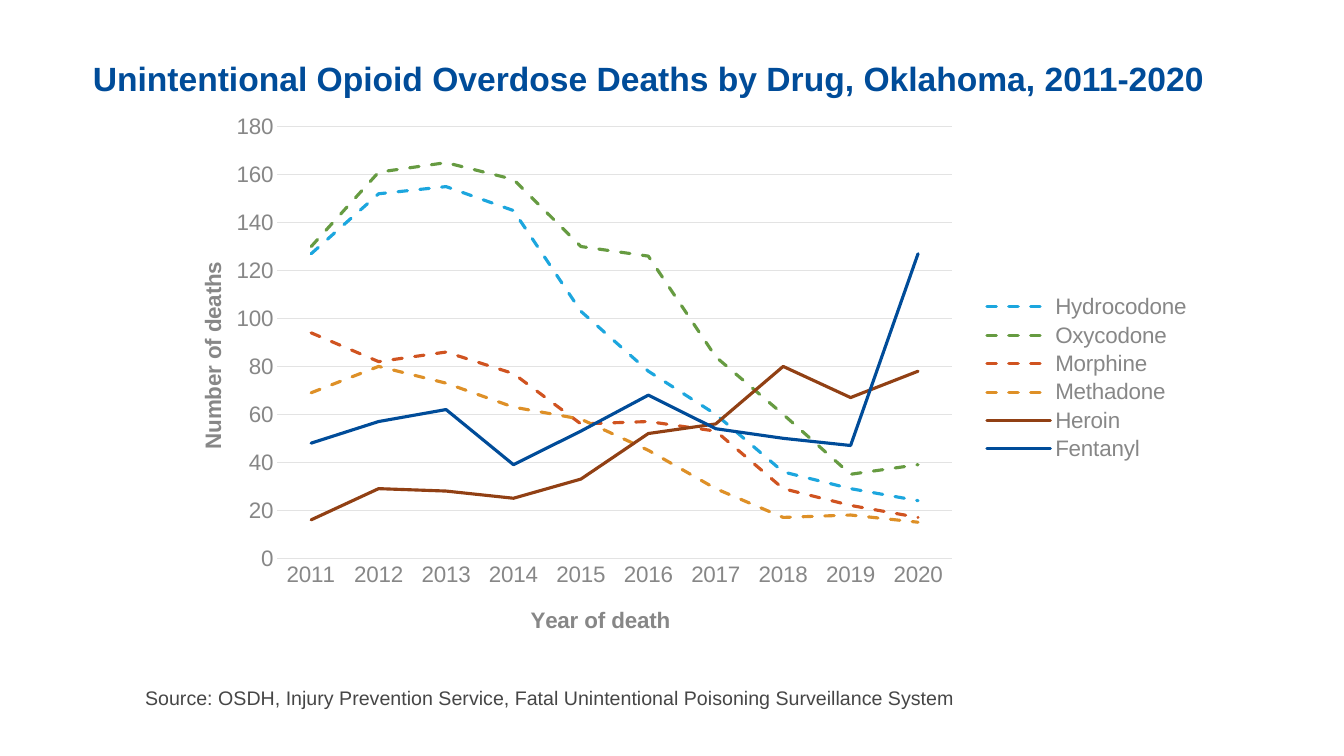
from lxml import etree
from pptx import Presentation
from pptx.chart.data import CategoryChartData
from pptx.dml.color import RGBColor
from pptx.enum.chart import XL_CHART_TYPE, XL_LEGEND_POSITION, XL_TICK_MARK
from pptx.enum.dml import MSO_LINE
from pptx.enum.text import MSO_ANCHOR, MSO_AUTO_SIZE, PP_ALIGN
from pptx.oxml.ns import qn
from pptx.util import Inches, Pt

LINE, RIGHT = XL_CHART_TYPE.LINE, XL_LEGEND_POSITION.RIGHT
NO_TICK, DASH = XL_TICK_MARK.NONE, MSO_LINE.DASH
LEFT, TOP, FIXED = PP_ALIGN.LEFT, MSO_ANCHOR.TOP, MSO_AUTO_SIZE.NONE

THEME = {
    "title": {"name": "Arial", "size": Pt(24), "bold": True, "color": "004C99"},
    "source": {"name": "Arial", "size": Pt(14), "bold": False, "color": "464646"},
    "chart": {"name": "Arial", "size": Pt(16), "bold": False, "color": "878787"},
    "axis_title": {"name": "Arial", "size": Pt(16), "bold": True, "color": "878787"},
    "grid": "E3E3E3",
}

YEARS = [str(year) for year in range(2011, 2021)]
DRUGS = [  # name, colour, dashed, deaths per year
    ("Hydrocodone", "1CA6DE", True, (127, 152, 155, 145, 103, 78, 60, 36, 29, 24)),
    ("Oxycodone", "669B41", True, (130, 161, 165, 158, 130, 126, 84, 60, 35, 39)),
    ("Morphine", "D05320", True, (94, 82, 86, 77, 56, 57, 53, 29, 22, 17)),
    ("Methadone", "DE9027", True, (69, 80, 73, 63, 58, 45, 29, 17, 18, 15)),
    ("Heroin", "914014", False, (16, 29, 28, 25, 33, 52, 56, 80, 67, 78)),
    ("Fentanyl", "004C99", False, (48, 57, 62, 39, 53, 68, 54, 50, 47, 127)),
]


def style(font, role):
    for key, value in THEME[role].items():
        if key == "color":
            font.color.rgb = RGBColor.from_string(value)
        else:
            setattr(font, key, value)


def place(parent, **fractions):
    """Fix the layout of a chart part, in fractions of the chart."""
    for old in parent.findall(qn("c:layout")):
        parent.remove(old)
    layout = etree.Element(qn("c:layout"))
    manual = etree.SubElement(layout, qn("c:manualLayout"))
    if parent.tag == qn("c:plotArea"):
        etree.SubElement(manual, qn("c:layoutTarget"), val="inner")
    for key in ("x", "y"):
        etree.SubElement(manual, qn(f"c:{key}Mode"), val="edge")
    for key, value in fractions.items():
        etree.SubElement(manual, qn(f"c:{key}"), val=str(value))
    overlay = parent.find(qn("c:overlay"))
    if overlay is None:
        parent.insert(0, layout)
    else:
        overlay.addprevious(layout)


prs = Presentation()
prs.slide_width, prs.slide_height = Inches(13.33), Inches(7.5)
slide = prs.slides.add_slide(prs.slide_layouts[5])

# Title and source line
title = slide.shapes.title
title.left, title.top, title.width, title.height = map(Inches, (0.82, 0.48, 11.88, 0.71))
source = slide.shapes.add_textbox(*map(Inches, (1.34, 6.76, 9.88, 0.22)))
texts = [
    (title, "title", 0.09, "Unintentional Opioid Overdose Deaths by Drug, Oklahoma, 2011-2020"),
    (source, "source", 0.05, "Source: OSDH, Injury Prevention Service, "
     "Fatal Unintentional Poisoning Surveillance System"),
]
for sp, role, inset, text in texts:
    tf = sp.text_frame
    tf.text = text
    frame = {"word_wrap": True, "auto_size": FIXED, "vertical_anchor": TOP,
             "margin_top": Inches(inset), "margin_bottom": 0}
    for key, value in frame.items():
        setattr(tf, key, value)
    p = tf.paragraphs[0]
    p.alignment = LEFT
    style(p.runs[0].font, role)

# Line chart
data = CategoryChartData()
data.categories = YEARS
for name, _, _, deaths in DRUGS:
    data.add_series(name, deaths)
chart = slide.shapes.add_chart(LINE, *map(Inches, (1.62, 1.04, 10.29, 5.42)), data).chart
chart.has_title = False
style(chart.font, "chart")
place(chart.plots[0]._element.getparent(), x=0.11, y=0.04, w=0.65, h=0.79)

for series, (_, color, dashed, _) in zip(chart.plots[0].series, DRUGS):
    series.smooth = False
    line = series.format.line
    line.color.rgb = RGBColor.from_string(color)
    line.width = Pt(2.25)
    if dashed:
        line.dash_style = DASH
    line._get_or_add_ln().set("cap", "rnd")

# Axes
axes = [
    (chart.category_axis, "Year of death", 0, 0.35, 0.91),
    (chart.value_axis, "Number of deaths", -5400000, 0.03, 0.28),
]
for axis, text, rotation, x, y in axes:
    axis.major_tick_mark = axis.minor_tick_mark = NO_TICK
    style(axis.tick_labels.font, "chart")
    tf = axis.axis_title.text_frame
    tf.text = text
    tf._txBody.bodyPr.set("rot", str(rotation))
    style(tf.paragraphs[0].runs[0].font, "axis_title")
    place(axis.axis_title._element, x=x, y=y)

values = chart.value_axis
values.minimum_scale, values.maximum_scale, values.major_unit = 0, 180, 20
values.has_major_gridlines = True
values.format.line.fill.background()
for line in (chart.category_axis.format.line, values.major_gridlines.format.line):
    line.color.rgb = RGBColor.from_string(THEME["grid"])
    line.width = Pt(0.75)

# Legend
chart.has_legend = True
legend = chart.legend
legend.position, legend.include_in_layout = RIGHT, False
style(legend.font, "chart")
place(legend._element, x=0.79, y=0.34, w=0.2, h=0.32)

prs.save("out.pptx")
